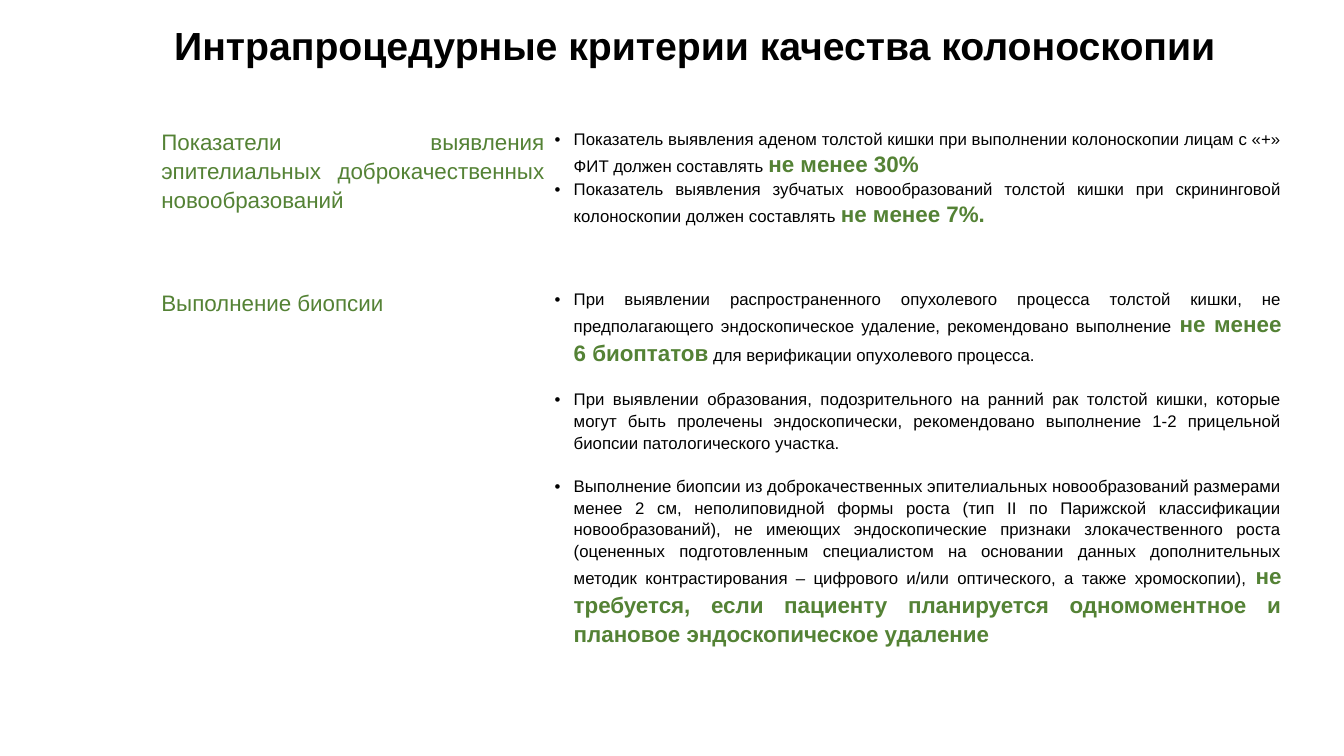
import pptx
import pptx.dml.color
import pptx.enum.text
import pptx.oxml
import pptx.oxml.ns
import pptx.util

Inches = pptx.util.Inches
Pt = pptx.util.Pt
ALIGN = pptx.enum.text.PP_ALIGN

FONT = "Arial"
BLACK = "000000"
GREEN = "548235"
BODY_SIZE = 12
ACCENT_SIZE = 16
BLANK_LINE = 15.5  # gap between the biopsy rules, in points


def color(value):
    return pptx.dml.color.RGBColor.from_string(value)


def add_run(paragraph, text, size, value, bold=False):
    run = paragraph.add_run()
    run.text = text
    run.font.name = FONT
    run.font.size = Pt(size)
    run.font.bold = bold
    run.font.color.rgb = color(value)


def plain(text):
    return text, BODY_SIZE, BLACK, False


def accent(text):
    return text, ACCENT_SIZE, GREEN, True


def add_bullet(paragraph):
    properties = paragraph._p.get_or_add_pPr()
    properties.set("marL", str(Inches(0.19)))
    properties.set("indent", str(-Inches(0.19)))
    for tag, attribute, value in (("buFont", "typeface", FONT), ("buChar", "char", "•")):
        element = pptx.oxml.parse_xml(f"<a:{tag} {pptx.oxml.ns.nsdecls('a')}/>")
        element.set(attribute, value)
        properties.append(element)


def fill_cell(cell, paragraphs, bulleted=False, gap=0):
    cell.fill.background()
    cell.margin_left = cell.margin_right = Inches(0.05)
    cell.margin_top = cell.margin_bottom = 0
    for index, runs in enumerate(paragraphs):
        frame = cell.text_frame
        paragraph = frame.add_paragraph() if index else frame.paragraphs[0]
        paragraph.alignment = ALIGN.JUSTIFY
        paragraph.line_spacing = 1.15
        if index and gap:
            paragraph.space_before = Pt(gap)
        if bulleted:
            add_bullet(paragraph)
        for run in runs:
            add_run(paragraph, *run)


def add_title(slide, text):
    box = slide.shapes.add_textbox(Inches(1.63), Inches(0.22), Inches(11.24), Inches(0.9))
    box.text_frame.word_wrap = True
    paragraph = box.text_frame.paragraphs[0]
    paragraph.line_spacing = 0.9
    add_run(paragraph, text, 28, BLACK, True)


def add_criteria_table(slide, criteria):
    frame = slide.shapes.add_table(
        len(criteria), 2, Inches(1.55), Inches(1.26), Inches(11.21), Inches(3.97))
    table = frame.table
    table.first_row = False
    table.horz_banding = False
    for column, width in zip(table.columns, (3.9, 7.31)):
        column.width = Inches(width)
    for index, (height, name, rules, gap) in enumerate(criteria):
        table.rows[index].height = Inches(height)
        fill_cell(table.cell(index, 0), [[(name, ACCENT_SIZE, GREEN)]])
        fill_cell(table.cell(index, 1), rules, bulleted=True, gap=gap)


def main():
    presentation = pptx.Presentation()
    presentation.slide_width = Inches(13.33)
    presentation.slide_height = Inches(7.5)
    slide = presentation.slides.add_slide(presentation.slide_layouts[6])

    add_title(slide, "Интрапроцедурные критерии качества колоноскопии")

    # Rules for each criterion
    detection_rules = [
        [plain("Показатель выявления аденом толстой кишки при выполнении колоноскопии "
               "лицам с «+» ФИТ должен составлять "),
         accent("не менее 30%")],
        [plain("Показатель выявления зубчатых новообразований толстой кишки при "
               "скрининговой колоноскопии должен составлять "),
         accent("не менее 7%.")],
    ]
    biopsy_rules = [
        [plain("При выявлении распространенного опухолевого процесса толстой кишки, не "
               "предполагающего эндоскопическое удаление, рекомендовано выполнение "),
         accent("не менее 6 биоптатов"),
         plain(" для верификации опухолевого процесса.")],
        [plain("При выявлении образования, подозрительного на ранний рак толстой кишки, "
               "которые могут быть пролечены эндоскопически, рекомендовано выполнение "
               "1-2 прицельной биопсии патологического участка.")],
        [plain("Выполнение биопсии из доброкачественных эпителиальных новообразований "
               "размерами менее 2 см, неполиповидной формы роста (тип II по Парижской "
               "классификации новообразований), не имеющих эндоскопические признаки "
               "злокачественного роста (оцененных подготовленным специалистом на основании "
               "данных дополнительных методик контрастирования – цифрового и/или "
               "оптического, а также хромоскопии), "),
         accent("не требуется, если пациенту планируется одномоментное и плановое "
                "эндоскопическое удаление")],
    ]

    # Row height, criterion, rules, gap between rules
    add_criteria_table(slide, [
        (1.59, "Показатели выявления эпителиальных доброкачественных новообразований",
         detection_rules, 0),
        (2.38, "Выполнение биопсии", biopsy_rules, BLANK_LINE),
    ])

    presentation.save("out.pptx")


if __name__ == "__main__":
    main()
